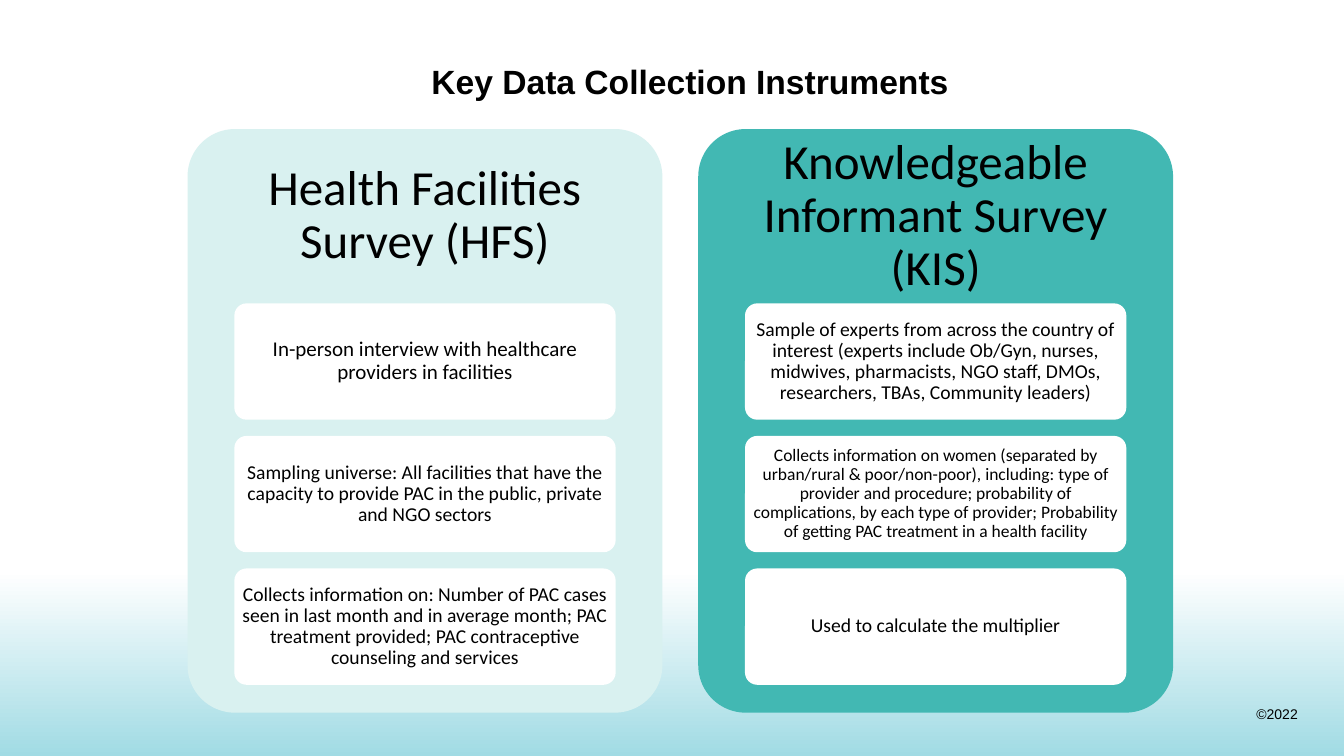
from pptx import Presentation
from pptx import util as u
from pptx.dml.color import RGBColor
from pptx.enum import shapes, text

BLACK = RGBColor(0x00, 0x00, 0x00)
WHITE = RGBColor(0xFF, 0xFF, 0xFF)
SKY = RGBColor(0xA1, 0xDB, 0xE4)
MINT = RGBColor(0xD9, 0xF1, 0xF0)
TEAL = RGBColor(0x42, 0xB8, 0xB3)

# Content: heading, panel colour, cards as (text, size)
TITLE = "Key Data Collection Instruments"
COPYRIGHT = "©2022"
PANELS = [
    ("Health Facilities Survey (HFS)", MINT, [
        ("In-person interview with healthcare providers in facilities", 15),
        ("Sampling universe: All facilities that have the capacity to provide "
         "PAC in the public, private and NGO sectors", 14),
        ("Collects information on: Number of PAC cases seen in last month and "
         "in average month; PAC treatment provided; PAC contraceptive "
         "counseling and services", 14),
    ]),
    ("Knowledgeable Informant Survey (KIS)", TEAL, [
        ("Sample of experts from across the country of interest (experts "
         "include Ob/Gyn, nurses, midwives, pharmacists, NGO staff, DMOs, "
         "researchers, TBAs, Community leaders)", 14),
        ("Collects information on women (separated by urban/rural & "
         "poor/non-poor), including: type of provider and procedure; "
         "probability of complications, by each type of provider; Probability "
         "of getting PAC treatment in a health facility", 12.5),
        ("Used to calculate the multiplier", 14),
    ]),
]

# Grid, in inches
SLIDE_W, SLIDE_H = 13.33, 7.5
BAND_TOP = 5.67
PANEL_LEFT, PANEL_TOP, PANEL_W, PANEL_H = 1.86, 1.28, 4.71, 5.79
PANEL_STEP = 5.065
HEADING_H = PANEL_H * 0.3
CARD_W, CARD_H = PANEL_W * 0.8, 1.14
CARD_TOP, CARD_STEP = PANEL_TOP + HEADING_H, 1.315

deck = Presentation()
deck.slide_width, deck.slide_height = u.Inches(SLIDE_W), u.Inches(SLIDE_H)
page = deck.slides.add_slide(deck.slide_layouts[6])


def add_block(kind, left, top, width, height, fill):
    block = page.shapes.add_shape(kind, *map(u.Inches, (left, top, width, height)))
    block.shadow.inherit = False
    block.line.fill.background()
    if fill is not None:
        block.fill.solid()
        block.fill.fore_color.rgb = fill
    return block


def add_textbox(left, top, width, height):
    return page.shapes.add_textbox(*map(u.Inches, (left, top, width, height)))


def write(box, words, size, font, align, anchor, insets=(0.1, 0.05),
          bold=False, wrap=True, spacing=1.0):
    frame = box.text_frame
    frame.word_wrap = wrap
    frame.vertical_anchor = anchor
    frame.margin_left = frame.margin_right = u.Inches(insets[0])
    frame.margin_top = frame.margin_bottom = u.Inches(insets[1])
    para = frame.paragraphs[0]
    para.text = words
    para.alignment = align
    para.line_spacing = spacing
    para.font.size = u.Pt(size)
    para.font.name = font
    para.font.bold = bold
    para.font.color.rgb = BLACK


# Fading band along the bottom
band = add_block(shapes.MSO_SHAPE.RECTANGLE, 0, BAND_TOP,
                 SLIDE_W, SLIDE_H - BAND_TOP, None)
band.fill.gradient()
band.fill.gradient_angle = 270
for stop, color in zip(band.fill.gradient_stops, (WHITE, SKY)):
    stop.color.rgb = color

# Copyright line and title
write(add_textbox(12.36, 6.95, 0.61, 0.27), COPYRIGHT, 10, "Arial",
      text.PP_ALIGN.RIGHT, text.MSO_ANCHOR.TOP, wrap=False)
write(add_textbox(4.18, 0.55, 5.6, 0.72), TITLE, 24, "Arial",
      text.PP_ALIGN.LEFT, text.MSO_ANCHOR.TOP, bold=True)

# Panels, each with a heading and three cards
for column, (heading, color, cards) in enumerate(PANELS):
    left = PANEL_LEFT + column * PANEL_STEP
    panel = add_block(shapes.MSO_SHAPE.ROUNDED_RECTANGLE,
                      left, PANEL_TOP, PANEL_W, PANEL_H, color)
    panel.adjustments[0] = 0.1
    write(add_textbox(left, PANEL_TOP, PANEL_W, HEADING_H), heading, 35,
          "Calibri", text.PP_ALIGN.CENTER, text.MSO_ANCHOR.MIDDLE,
          insets=(0.15, 0.15), spacing=0.9)
    for row, (words, size) in enumerate(cards):
        card = add_block(shapes.MSO_SHAPE.ROUNDED_RECTANGLE,
                         left + (PANEL_W - CARD_W) / 2,
                         CARD_TOP + row * CARD_STEP, CARD_W, CARD_H, WHITE)
        card.adjustments[0] = 0.1
        card.line.color.rgb = WHITE
        card.line.width = u.Pt(1)
        write(card, words, size, "Calibri", text.PP_ALIGN.CENTER,
              text.MSO_ANCHOR.MIDDLE, insets=(0.04, 0.03), spacing=0.9)

deck.save("out.pptx")
